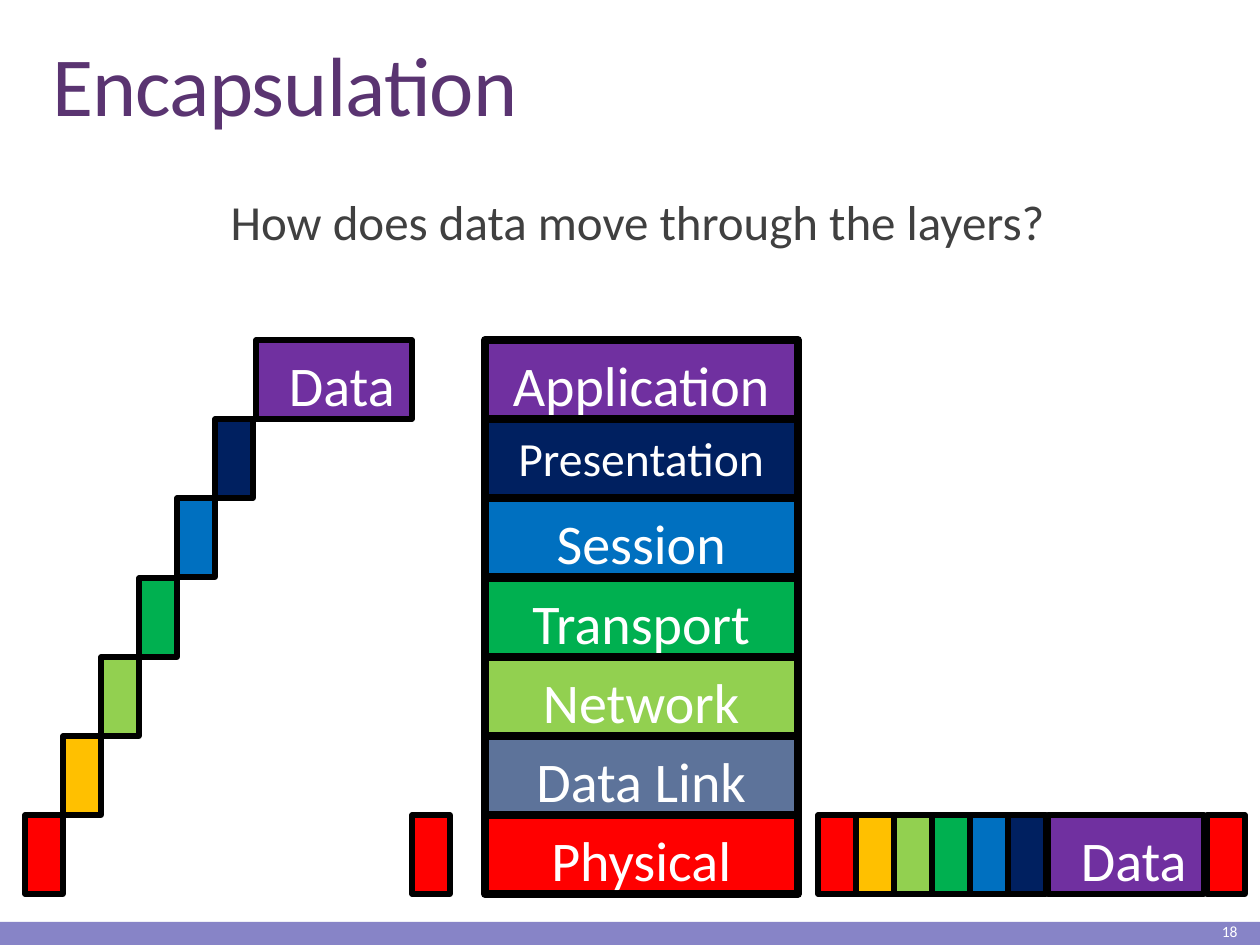
from lxml.etree import SubElement
from pptx import Presentation
from pptx.dml.color import RGBColor
from pptx.enum.shapes import MSO_SHAPE
from pptx.enum.text import MSO_ANCHOR as ANCHOR, PP_ALIGN as ALIGN
from pptx.oxml.ns import qn
from pptx.util import Pt

# Content
TITLE = "Encapsulation"
QUESTION = "How does data move through the layers?"
PAGE = "18"
LAYERS = [  # name, text size, layer colour
    ("Application", 32, "7030A0"),
    ("Presentation", 27.2, "002060"),
    ("Session", 32, "0070C0"),
    ("Transport", 32, "00B050"),
    ("Network", 32, "92D050"),
    ("Data Link", 32, "5D739A"),
    ("Physical", 32, "FF0000"),
]
DATA_COLOR = "7030A0"
HEADERS = ["002060", "0070C0", "00B050", "92D050", "FFC000", "FF0000"]
TRAILER = "FF0000"

# Layout in px
PX = 914400 / 126
STACK_X, STACK_W = 485, 313
ROW_H = 79
ROW_TOPS = [round(340 + i * 475 / 6) for i in range(len(LAYERS))]
HEADER_W, DATA_W = 38, 156


def px(n):
    return round(n * PX)


def rgb(color):
    return RGBColor.from_string(color)


def style(p, size, color, align=None):
    p.alignment = align
    for r in p.runs:
        r.font.name = "Calibri"
        r.font.size = Pt(size)
        r.font.color.rgb = rgb(color)


def place(sp, x, y, w, h):
    sp.left, sp.top, sp.width, sp.height = map(px, (x, y, w, h))


def box(x, y, w, h, color, line=0, text="", size=32, inset=12):
    s = slide.shapes.add_shape(MSO_SHAPE.RECTANGLE, *map(px, (x, y, w, h)))
    s.shadow.inherit = False
    s.fill.solid()
    s.fill.fore_color.rgb = rgb(color)
    if line:
        s.line.color.rgb = rgb("000000")
        s.line.width = Pt(line)
    else:
        s.line.fill.background()
    if text:
        tf = s.text_frame
        tf.vertical_anchor = ANCHOR.TOP
        tf.margin_left, tf.margin_top = px(inset), px(10)
        tf.text = text
        style(tf.paragraphs[0], size, "FFFFFF", ALIGN.CENTER)


def packet(header_x, data_x, trailer_x, data_top, header_tops):
    """Data, its headers from the innermost outwards, and the trailer."""
    box(data_x, data_top, DATA_W, ROW_H, DATA_COLOR, 3, "Data", inset=28)
    last = len(HEADERS) - 1
    for i, (color, top) in enumerate(zip(HEADERS, header_tops)):
        box(header_x + (last - i) * HEADER_W, top, HEADER_W, ROW_H, color, 3)
    box(trailer_x, ROW_TOPS[-1], HEADER_W, ROW_H, TRAILER, 3)


prs = Presentation()
prs.slide_width, prs.slide_height = px(1260), px(945)
slide = prs.slides.add_slide(prs.slide_layouts[1])

# Footer bar and page number
box(0, 922, 1260, 23, "8784C7")
number = slide.shapes.add_textbox(*map(px, (1114, 917, 136, 28)))
tf = number.text_frame
tf.word_wrap = True
tf.vertical_anchor = ANCHOR.MIDDLE
tf.text = PAGE
style(tf.paragraphs[0], 8.9, "FFFFFF", ALIGN.RIGHT)

# Title
title = slide.shapes.title
place(title, 40, 39, 1195, 101)
tf = title.text_frame
tf.vertical_anchor = ANCHOR.BOTTOM
tf.text = TITLE
p = tf.paragraphs[0]
style(p, 48, "5A3471", ALIGN.LEFT)
p.line_spacing = 0.85
p.runs[0].font._element.set("spc", "-50")

# Question
body = slide.placeholders[1]
place(body, 40, 192, 1195, 660)
tf = body.text_frame
tf.margin_left = tf.margin_right = 0
tf.text = QUESTION
p = tf.paragraphs[0]
style(p, 28, "404040", ALIGN.CENTER)
p.line_spacing, p.space_before, p.space_after = 0.9, Pt(12), Pt(2)
pPr = p._p.get_or_add_pPr()
pPr.set("marL", "0")
pPr.set("indent", "0")
SubElement(pPr, qn("a:buNone"))

# Layer stack
for (name, size, color), top in zip(LAYERS, ROW_TOPS):
    box(STACK_X, top, STACK_W, ROW_H, color, 4.5, name, size)

# Headers added layer by layer, then the finished packet
packet(25, 256, 412, ROW_TOPS[0], ROW_TOPS[1:])
packet(818, 1048, 1207, ROW_TOPS[-1], [ROW_TOPS[-1]] * len(HEADERS))

prs.save("out.pptx")
